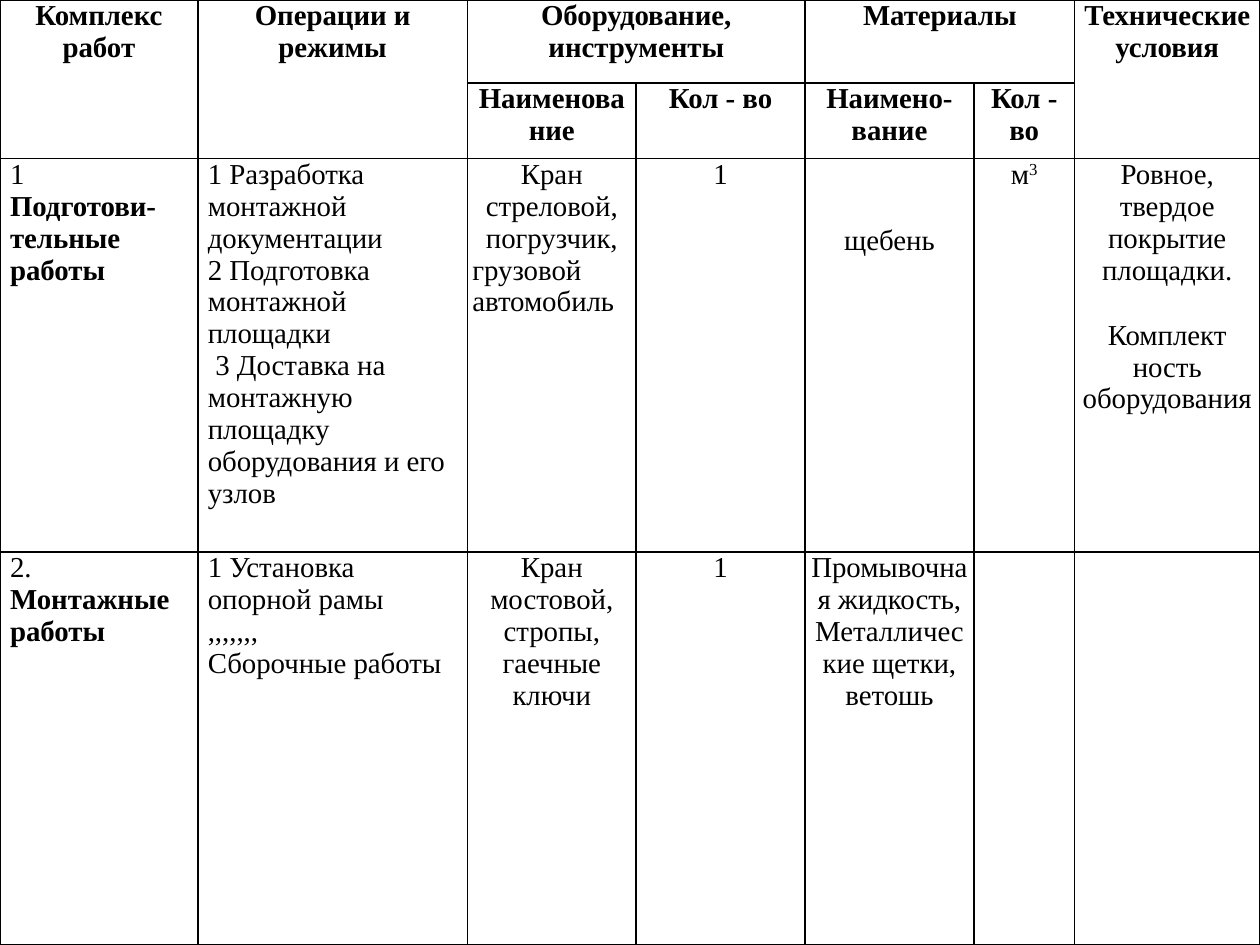
"""Build a one-slide table of installation works, equipment and materials."""
from lxml import etree
from pptx import Presentation
from pptx import util as u
from pptx.dml.color import RGBColor
from pptx.enum import text
from pptx.oxml import ns

BLACK = RGBColor(0x00, 0x00, 0x00)
LEFT, CENTER, JUSTIFY = text.PP_ALIGN.LEFT, text.PP_ALIGN.CENTER, text.PP_ALIGN.JUSTIFY

COLS = [1.57, 2.14, 1.34, 1.34, 1.34, 0.8, 1.47]
ROWS = [0.66, 0.6, 3.12, 3.12]
LINE = 19

MERGES = [((0, 0), (1, 0)), ((0, 1), (1, 1)), ((0, 2), (0, 3)),
          ((0, 4), (0, 5)), ((0, 6), (1, 6))]

HEADS = {
    (0, 0): ["Комплекс работ"],
    (0, 1): ["Операции и режимы"],
    (0, 2): ["Оборудование,", "инструменты"],
    (0, 4): ["Материалы"],
    (0, 6): ["Технические условия"],
    (1, 2): ["Наименова", "ние"],
    (1, 3): ["Кол - во"],
    (1, 4): ["Наимено-вание"],
    (1, 5): ["Кол - во"],
}
STAGES = {
    (2, 0): [[("1", {})], [("Подготови-", {"bold": True})],
             [("тельные работы", {"bold": True})]],
    (3, 0): [[("2. ", {}), ("Монтажные работы", {"bold": True})]],
}
OPERATIONS = {
    (2, 1): ["1 Разработка монтажной документации",
             "2 Подготовка монтажной площадки",
             ("3 Доставка на монтажную площадку оборудования и его узлов",
              {"indent": 0.06})],
    (3, 1): ["1 Установка опорной рамы", ",,,,,,,", "Сборочные работы"],
}
RESOURCES = {
    (2, 2): ["Кран стреловой, погрузчик,", ("грузовой автомобиль", {"align": LEFT})],
    (2, 3): ["1"],
    (2, 4): ["щебень"],
    (2, 5): [[("м", {}), ("3", {"baseline": 30000})]],
    (2, 6): ["Ровное, твердое покрытие площадки.",
             ("Комплект", {"before": LINE}), "ность оборудования"],
    (3, 2): ["Кран мостовой, стропы, гаечные ключи"],
    (3, 3): ["1"],
    (3, 4): ["Промывочная жидкость,", "Металлические щетки, ветошь"],
}


def add_run(p, content, font="Times New Roman", size=16.5, color=BLACK,
            bold=False, baseline=None):
    """Append formatted text to a paragraph."""
    r = p.add_run()
    r.text = content
    r.font.name, r.font.size, r.font.bold = font, u.Pt(size), bold
    r.font.color.rgb = color
    if baseline:
        r.font._element.set("baseline", str(baseline))


class Sheet:
    """Hold the style and the current slide."""

    def __init__(self, s, inset=0.04, border=1):
        self.s, self.inset, self.border = s, inset, border

    def table(self, cols, rows, merges):
        """Add a plain bordered table that fills the slide."""
        frame = self.s.shapes.add_table(
            len(rows), len(cols), 0, 0, u.Inches(sum(cols)), u.Inches(sum(rows)))
        tbl = frame.table
        tbl.first_row = tbl.horz_banding = False
        for col, width in zip(tbl.columns, cols):
            col.width = u.Inches(width)
        for row, height in zip(tbl.rows, rows):
            row.height = u.Inches(height)
        for cell in tbl.iter_cells():
            self.frame_cell(cell)
        for first, last in merges:
            tbl.cell(*first).merge(tbl.cell(*last))
        return tbl

    def frame_cell(self, cell):
        """Give a cell its insets, black borders and empty fill."""
        cell.margin_left = cell.margin_right = u.Inches(self.inset)
        cell.margin_top = cell.margin_bottom = 0
        tc_pr = cell._tc.get_or_add_tcPr()
        for side in ("a:lnL", "a:lnR", "a:lnT", "a:lnB"):
            ln = etree.SubElement(tc_pr, ns.qn(side), w=str(u.Pt(self.border)))
            fill = etree.SubElement(ln, ns.qn("a:solidFill"))
            etree.SubElement(fill, ns.qn("a:srgbClr"), val=str(BLACK))
        cell.fill.background()

    def fill_cell(self, cell, lines, align=CENTER, margin=0, bold=False):
        """Write one paragraph for each line."""
        tf = cell.text_frame
        for i, line in enumerate(lines):
            p = tf.paragraphs[0] if i == 0 else tf.add_paragraph()
            content, opts = line if isinstance(line, tuple) else (line, {})
            p.alignment = opts.get("align", align)
            if "before" in opts:
                p.space_before = u.Pt(opts["before"])
            p_pr = p._p.get_or_add_pPr()
            p_pr.set("marL", str(u.Inches(margin)))
            p_pr.set("indent", str(u.Inches(opts.get("indent", 0))))
            runs = [(content, {"bold": bold})] if isinstance(content, str) else content
            for part, style in runs:
                add_run(p, part, **style)


def main():
    """Build and save the presentation."""
    prs = Presentation()
    prs.slide_width, prs.slide_height = u.Inches(10), u.Inches(7.5)
    sheet = Sheet(prs.slides.add_slide(prs.slide_layouts[6]))
    tbl = sheet.table(COLS, ROWS, MERGES)
    groups = [(HEADS, {"bold": True}),
              (STAGES, {"align": JUSTIFY, "margin": 0.04}),
              (OPERATIONS, {"align": LEFT, "margin": 0.04}),
              (RESOURCES, {})]
    for cells, style in groups:
        for place, lines in cells.items():
            sheet.fill_cell(tbl.cell(*place), lines, **style)
    tbl.cell(2, 4).margin_top = u.Pt(2 * LINE)
    for place in ((3, 5), (3, 6)):
        tbl.cell(*place).text_frame.paragraphs[0].font.size = u.Pt(16.5)
    prs.save("out.pptx")


if __name__ == "__main__":
    main()
